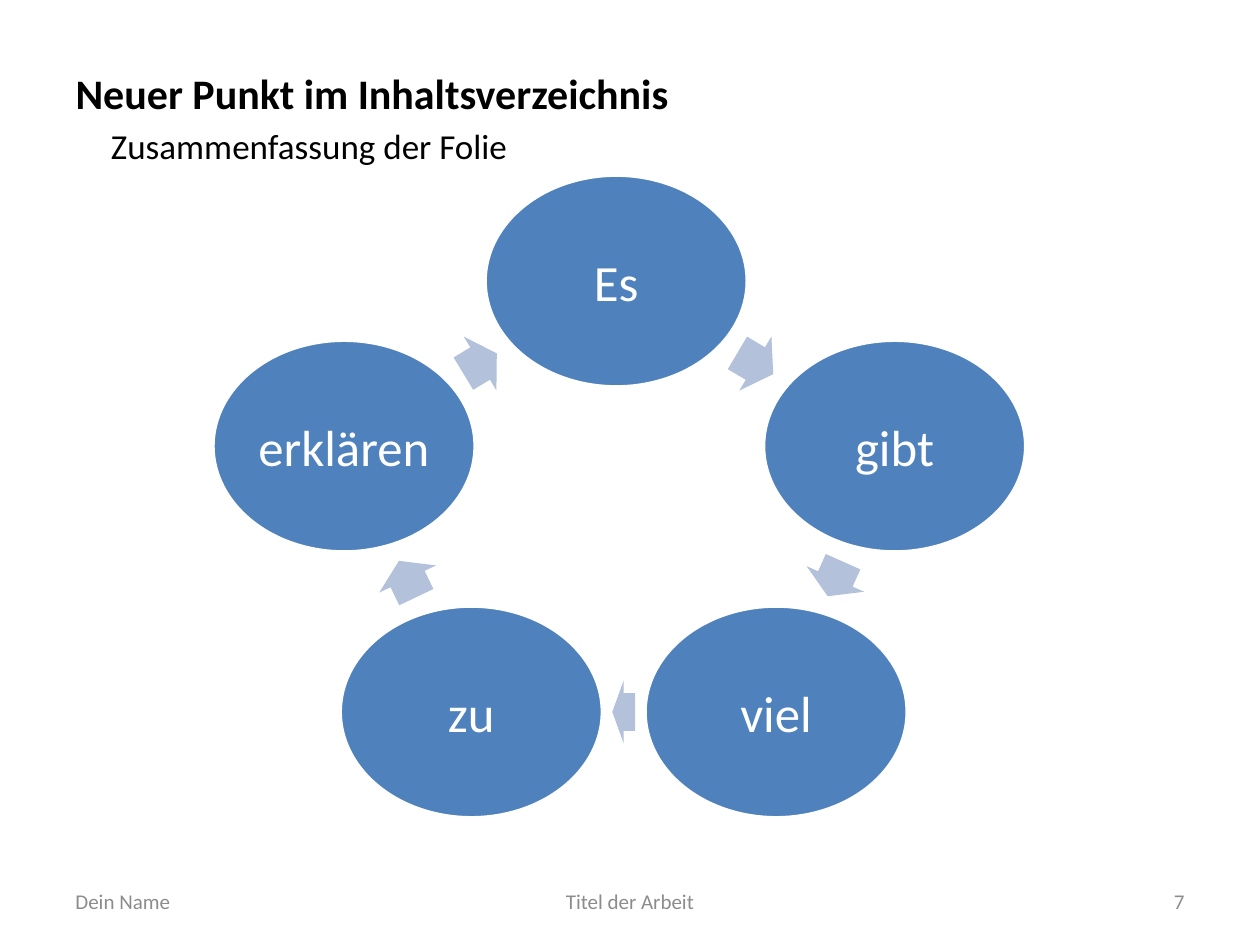
from math import atan2, degrees

from pptx import Presentation
from pptx.dml.color import RGBColor
from pptx.enum.shapes import MSO_SHAPE
from pptx.enum.text import MSO_ANCHOR, MSO_AUTO_SIZE, PP_ALIGN
from pptx.oxml.xmlchemy import OxmlElement
from pptx.util import Pt

ELLIPSE, ARROW = MSO_SHAPE.OVAL, MSO_SHAPE.RIGHT_ARROW
TOP, MIDDLE = MSO_ANCHOR.TOP, MSO_ANCHOR.MIDDLE
LEFT, CENTER, RIGHT = PP_ALIGN.LEFT, PP_ALIGN.CENTER, PP_ALIGN.RIGHT
NO_FIT = MSO_AUTO_SIZE.NONE

COLORS = {"step": "4F81BD", "arrow": "B3C1DB", "white": "FFFFFF",
          "footer": "8C8C8C", "text": "000000"}


class SlideBuilder:
    font_name = "Calibri"
    step_size = (149.8, 121)
    arrow_height = 36

    def __init__(self, slide):
        self.slide = slide

    def color(self, key):
        return RGBColor.from_string(COLORS[key])

    def apply(self, target, formats):
        for attribute, value in formats.items():
            setattr(target, attribute, value)

    def set_text(self, shape, text, size, color, align=LEFT, anchor=MIDDLE, bold=False):
        frame = shape.text_frame
        frame.text = text
        self.apply(frame, {"word_wrap": True, "auto_size": NO_FIT,
                           "vertical_anchor": anchor})
        paragraph = frame.paragraphs[0]
        self.apply(paragraph, {"alignment": align, "space_before": Pt(0)})
        font = paragraph.runs[0].font
        self.apply(font, {"name": self.font_name, "size": Pt(size), "bold": bold})
        font.color.rgb = self.color(color)
        return paragraph

    def place(self, shape, left, top, width, height):
        self.apply(shape, {"left": Pt(left), "top": Pt(top),
                           "width": Pt(width), "height": Pt(height)})

    def title(self, text, box):
        heading = self.slide.shapes.title
        self.place(heading, *box)
        self.set_text(heading, text, 24, "text", bold=True)

    def summary(self, text, box):
        body = self.slide.placeholders[1]
        self.place(body, *box)
        paragraph = self.set_text(body, text, 20, "text", anchor=TOP)
        properties = paragraph._p.get_or_add_pPr()
        properties.set("marL", "0")
        properties.set("indent", "0")
        properties.append(OxmlElement("a:buNone"))

    def footer(self, text, left, width, align):
        box = self.slide.shapes.add_textbox(Pt(left), Pt(500.4), Pt(width), Pt(28.8))
        self.set_text(box, text, 12, "footer", align)

    def centered_shape(self, kind, center, size, fill):
        (x, y), (width, height) = center, size
        shape = self.slide.shapes.add_shape(
            kind, Pt(x - width / 2), Pt(y - height / 2), Pt(width), Pt(height))
        shape.shadow.inherit = False
        shape.fill.solid()
        shape.fill.fore_color.rgb = self.color(fill)
        return shape

    def step(self, text, center):
        ellipse = self.centered_shape(ELLIPSE, center, self.step_size, "step")
        ellipse.line.color.rgb = self.color("white")
        ellipse.line.width = Pt(2)
        self.set_text(ellipse, text, 29, "white", CENTER)
        sides = ("left", "top", "right", "bottom")
        self.apply(ellipse.text_frame, {f"margin_{side}": Pt(2.9) for side in sides})

    def arrow(self, start, end, length):
        (x1, y1), (x2, y2) = start, end
        middle = ((x1 + x2) / 2, (y1 + y2) / 2)
        arrow = self.centered_shape(ARROW, middle, (length, self.arrow_height), "arrow")
        arrow.line.fill.background()
        arrow.adjustments[0] = 0.6
        arrow.adjustments[1] = 0.5
        arrow.rotation = degrees(atan2(y2 - y1, x2 - x1)) % 360


def main():
    presentation = Presentation()
    presentation.slide_width, presentation.slide_height = Pt(720), Pt(540)
    slide = presentation.slides.add_slide(presentation.slide_layouts[1])
    builder = SlideBuilder(slide)

    builder.title("Neuer Punkt im Inhaltsverzeichnis", (36, 21.6, 648, 62.6))
    builder.summary("Zusammenfassung der Folie", (56.2, 67.7, 517.7, 31.7))

    cycle = [("Es", (352.1, 160.6), 23.8), ("gibt", (511.2, 254.9), 21.6),
             ("viel", (443.5, 406.8), 13), ("zu", (269.3, 406.8), 23),
             ("erklären", (196.6, 254.9), 22.3)]
    following = cycle[1:] + cycle[:1]
    for (word, center, arrow_length), (_, next_center, _) in zip(cycle, following):
        builder.step(word, center)
        builder.arrow(center, next_center, arrow_length)

    builder.footer("Dein Name", 36, 168, LEFT)
    builder.footer("Titel der Arbeit", 246, 228, CENTER)
    builder.footer("7", 516, 168, RIGHT)
    presentation.save("out.pptx")


if __name__ == "__main__":
    main()
